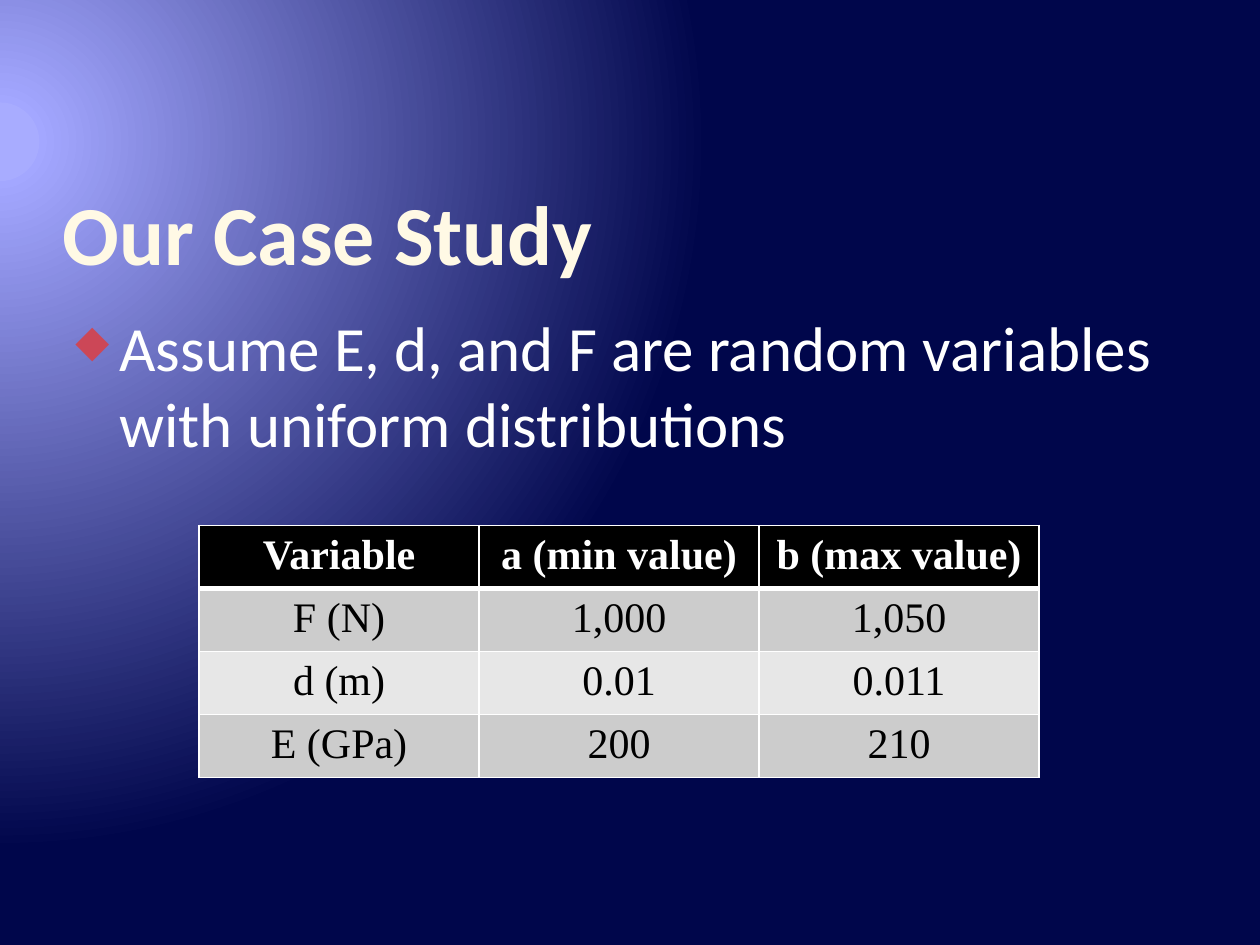
from dataclasses import dataclass

import lxml.etree
import pptx
import pptx.dml.color
import pptx.enum.text
import pptx.oxml
import pptx.oxml.ns
import pptx.util

COLORS = {
    "navy": "00064B", "pale": "A8ACFF", "lavender": "A3A7FF",
    "deep": "000D9E", "violet": "797FFF", "cream": "FFF9E5",
    "red": "CC4757", "white": "FFFFFF", "black": "000000",
    "band": "CCCCCC", "light_band": "E7E7E7",
}
WIDTH, HEIGHT = pptx.util.Inches(10), pptx.util.Inches(7.5)
NAMESPACE = 'xmlns:a="http://schemas.openxmlformats.org/drawingml/2006/main"'
ROWS = [
    ("Variable", "a (min value)", "b (max value)"),
    ("F (N)", "1,000", "1,050"),
    ("d (m)", "0.01", "0.011"),
    ("E (GPa)", "200", "210"),
]


@dataclass(frozen=True)
class Stop:
    percent: int
    color: str
    alpha: int = 100


@dataclass(frozen=True)
class Wave:
    """A band whose top edge is one curve; heights are inches from the top."""
    left_y: float
    control_1: tuple[float, float]
    control_2: tuple[float, float]
    right_y: float
    bottom: float
    crest: Stop


WAVES = [
    Wave(2.13, (5, 2.13), (5.34, 0.05), 1.25, 7.33, Stop(100, "violet", 55)),
    Wave(2.13, (5, 2.13), (5.98, 0.31), 1.47, 6.37, Stop(100, "lavender", 30)),
]


def rgb(name: str) -> pptx.dml.color.RGBColor:
    return pptx.dml.color.RGBColor.from_string(COLORS[name])


def gradient(stops: list[Stop], direction: str):
    listed = "".join(
        f'<a:gs pos="{stop.percent * 1000}"><a:srgbClr val="{COLORS[stop.color]}">'
        f'<a:alpha val="{stop.alpha * 1000}"/></a:srgbClr></a:gs>' for stop in stops)
    return pptx.oxml.parse_xml(
        f'<a:gradFill {NAMESPACE} rotWithShape="1"><a:gsLst>{listed}</a:gsLst>'
        f'{direction}</a:gradFill>')


def swap_solid_fill(parent, replacement) -> None:
    solid = parent.find(pptx.oxml.ns.qn("a:solidFill"))
    parent.replace(solid, replacement)


def paint_background(slide) -> None:
    slide.background.fill.solid()
    properties = next(slide._element.iter(pptx.oxml.ns.qn("p:bgPr")))
    glow = [Stop(5, "pale"), Stop(5, "lavender"), Stop(90, "navy")]
    swap_solid_fill(properties, gradient(
        glow, '<a:path path="circle"><a:fillToRect l="20000" t="30000" '
              'r="135000" b="100000"/></a:path>'))


def draw_wave(slide, wave: Wave) -> None:
    inch = pptx.util.Inches(1)
    builder = slide.shapes.build_freeform(10, wave.bottom, scale=inch)
    builder.add_line_segments(
        [(0, wave.bottom), (0, wave.left_y), (10, wave.right_y)], close=True)
    shape = builder.convert_to_shape()
    shape.shadow.inherit = False
    shape.line.fill.background()
    shape.fill.solid()
    swap_solid_fill(shape._element.spPr, gradient(
        [Stop(65, "deep", 0), wave.crest], '<a:lin ang="15600000" scaled="0"/>'))

    top_edge = list(shape._element.iter(pptx.oxml.ns.qn("a:lnTo")))[2]
    points = "".join(
        f'<a:pt x="{round(x * inch)}" y="{round((y - wave.right_y) * inch)}"/>'
        for x, y in (wave.control_1, wave.control_2, (10, wave.right_y)))
    top_edge.getparent().replace(top_edge, pptx.oxml.parse_xml(
        f"<a:cubicBezTo {NAMESPACE}>{points}</a:cubicBezTo>"))


def write(frame, text: str, *, size: int, color: str, font: str = "Calibri",
          bold: bool = False, align=pptx.enum.text.PP_ALIGN.LEFT):
    frame.word_wrap = True
    paragraph = frame.paragraphs[0]
    paragraph.alignment = align
    run = paragraph.add_run()
    run.text = text
    run.font.name, run.font.size, run.font.bold = font, pptx.util.Pt(size), bold
    run.font.color.rgb = rgb(color)
    return paragraph


def add_frame(slide, top: float, height: float):
    """Add a text box 90% of the slide wide; top and height are shares."""
    return slide.shapes.add_textbox(
        round(0.05 * WIDTH), round(top * HEIGHT),
        round(0.9 * WIDTH), round(height * HEIGHT)).text_frame


def add_bullet(paragraph) -> None:
    properties = paragraph._p.get_or_add_pPr()
    indent = pptx.util.Inches(0.35)
    properties.set("marL", str(indent))
    properties.set("indent", str(-indent))
    for part in (
        '<a:spcBef {}><a:spcPct val="20000"/></a:spcBef>',
        '<a:buClr {}><a:srgbClr val="' + COLORS["red"] + '"/></a:buClr>',
        '<a:buSzPct {} val="70000"/>',
        '<a:buChar {} char="◆"/>',
    ):
        properties.append(pptx.oxml.parse_xml(part.format(NAMESPACE)))


def add_borders(cell, **points: int) -> None:
    properties = cell._tc.get_or_add_tcPr()
    for side in "LRTB":
        line = lxml.etree.SubElement(
            properties, pptx.oxml.ns.qn(f"a:ln{side}"),
            w=str(pptx.util.Pt(points.get(side, 1))))
        fill = lxml.etree.SubElement(line, pptx.oxml.ns.qn("a:solidFill"))
        lxml.etree.SubElement(fill, pptx.oxml.ns.qn("a:srgbClr"), val=COLORS["white"])


def add_variable_table(slide) -> None:
    table = slide.shapes.add_table(
        len(ROWS), len(ROWS[0]), pptx.util.Inches(1.58), pptx.util.Inches(4.17),
        round(WIDTH * 2 / 3), len(ROWS) * pptx.util.Inches(0.41)).table
    table.first_row = table.horz_banding = False
    for row, values in enumerate(ROWS):
        header = row == 0
        fill = "black" if header else "band" if row % 2 else "light_band"
        for column, value in enumerate(values):
            cell = table.cell(row, column)
            add_borders(cell, T=3 if row == 1 else 1, B=3 if header else 1)
            cell.fill.solid()
            cell.fill.fore_color.rgb = rgb(fill)
            write(cell.text_frame, value, size=24, font="Times New Roman", bold=header,
                  color="white" if header else "black",
                  align=pptx.enum.text.PP_ALIGN.CENTER)


def main() -> None:
    deck = pptx.Presentation()
    deck.slide_width, deck.slide_height = WIDTH, HEIGHT
    slide = deck.slides.add_slide(deck.slide_layouts[6])
    paint_background(slide)
    for wave in WAVES:
        draw_wave(slide, wave)

    title = add_frame(slide, 0.08, 0.22)
    title.margin_left = title.margin_right = 0
    title.margin_top = title.margin_bottom = pptx.util.Inches(0.01)
    title.vertical_anchor = pptx.enum.text.MSO_ANCHOR.BOTTOM
    write(title, "Our Case Study", size=48, color="cream", bold=True)

    assumption = write(
        add_frame(slide, 0.32, 0.2),
        "Assume E, d, and F are random variables with uniform distributions",
        size=36, color="white")
    add_bullet(assumption)
    add_variable_table(slide)
    deck.save("out.pptx")


if __name__ == "__main__":
    main()
